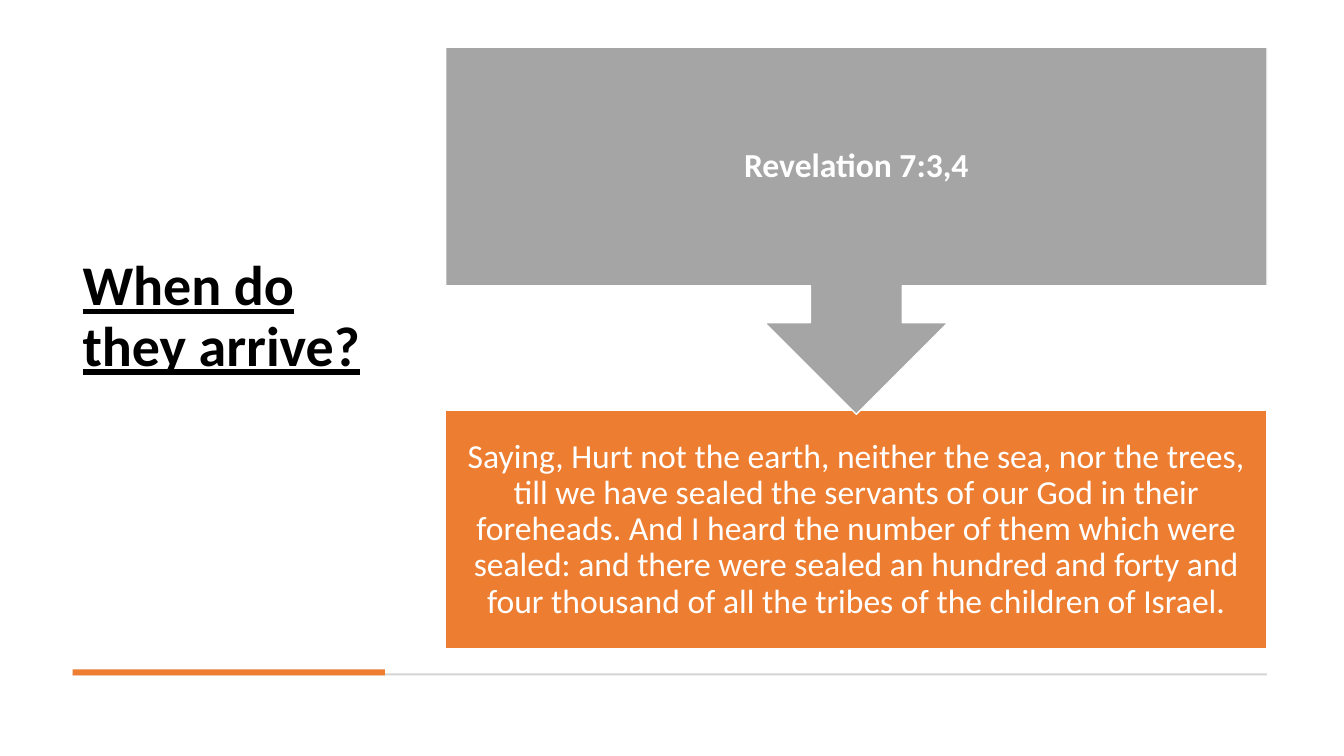
"""Build a slide pairing a title with a scripture reference and its verse."""
from dataclasses import dataclass

from pptx import Presentation
from pptx.dml.color import RGBColor
from pptx.enum.shapes import MSO_SHAPE
from pptx.enum.text import MSO_ANCHOR, MSO_AUTO_SIZE, PP_ALIGN
from pptx.util import Cm, Pt

RECTANGLE = MSO_SHAPE.RECTANGLE
ARROW_CALLOUT = MSO_SHAPE.UP_ARROW_CALLOUT
MIDDLE = MSO_ANCHOR.MIDDLE
LEFT, CENTER = PP_ALIGN.LEFT, PP_ALIGN.CENTER
FIXED_SIZE = MSO_AUTO_SIZE.NONE

TITLE = "When do they arrive?"
REFERENCE = "Revelation 7:3,4"
VERSE = (
    "Saying, Hurt not the earth, neither the sea, nor the trees, till we have "
    "sealed the servants of our God in their foreheads. And I heard the number "
    "of them which were sealed: and there were sealed an hundred and forty and "
    "four thousand of all the tribes of the children of Israel."
)


@dataclass(frozen=True)
class Theme:
    """Colours, font and type sizes of the slide."""
    font: str = "Calibri"
    ink: str = "000000"
    white: str = "FFFFFF"
    gray: str = "A5A5A5"
    orange: str = "ED7D31"
    rule: str = "D5D5D5"
    title_size: int = 40
    body_size: int = 24
    line_spacing: float = 0.9


THEME = Theme()

SLIDE_WIDTH, SLIDE_HEIGHT = Cm(33.87), Cm(19.05)
MARGIN_LEFT, MARGIN_TOP = Cm(1.83), Cm(1.19)
CONTENT_WIDTH, CONTENT_HEIGHT = Cm(30.1), Cm(15.16)
TITLE_WIDTH, PANEL_WIDTH = Cm(7.87), Cm(20.7)
PANEL_HEIGHT, CALLOUT_HEIGHT = Cm(6), Cm(9.25)
PANEL_LEFT = MARGIN_LEFT + CONTENT_WIDTH - PANEL_WIDTH
VERSE_TOP = MARGIN_TOP + CONTENT_HEIGHT - PANEL_HEIGHT
PANEL_INSET = Cm(0.48)
TITLE_INSETS = (Cm(0.25), Cm(0.13), Cm(0.25), Cm(1.65))
RULE_TOP, RULE_HEIGHT = Cm(16.97), Cm(0.05)
ACCENT_TOP, ACCENT_HEIGHT = Cm(16.87), Cm(0.15)


def add_block(slide, preset, box, fill, outlined=False):
    """Add a filled shape, with a thin white outline if asked."""
    shape = slide.shapes.add_shape(preset, *box)
    shape.shadow.inherit = False
    shape.fill.solid()
    shape.fill.fore_color.rgb = RGBColor.from_string(fill)
    if outlined:
        shape.line.color.rgb = RGBColor.from_string(THEME.white)
        shape.line.width = Pt(1)
    else:
        shape.line.fill.background()
    return shape


def write_text(shape, text, size, color, alignment, insets, bold=False, underline=False):
    """Write one vertically centred paragraph into a shape."""
    frame = shape.text_frame
    frame.word_wrap = True
    frame.auto_size = FIXED_SIZE
    frame.vertical_anchor = MIDDLE
    frame.margin_left, frame.margin_top, frame.margin_right, frame.margin_bottom = insets
    paragraph = frame.paragraphs[0]
    paragraph.alignment = alignment
    paragraph.line_spacing = THEME.line_spacing
    run = paragraph.add_run()
    run.text = text
    run.font.name = THEME.font
    run.font.size = Pt(size)
    run.font.bold = bold
    run.font.underline = underline
    run.font.color.rgb = RGBColor.from_string(color)


def write_panel(shape, text, bold=False):
    """Write white centred text into a panel."""
    write_text(shape, text, THEME.body_size, THEME.white, CENTER, (PANEL_INSET,) * 4, bold)


def main():
    """Assemble the slide and save it."""
    presentation = Presentation()
    presentation.slide_width, presentation.slide_height = SLIDE_WIDTH, SLIDE_HEIGHT
    slide = presentation.slides.add_slide(presentation.slide_layouts[5])

    title = slide.shapes.title
    title.left, title.top = MARGIN_LEFT, MARGIN_TOP
    title.width, title.height = TITLE_WIDTH, CONTENT_HEIGHT
    write_text(title, TITLE, THEME.title_size, THEME.ink, LEFT, TITLE_INSETS,
               bold=True, underline=True)

    add_block(slide, RECTANGLE, (MARGIN_LEFT, RULE_TOP, CONTENT_WIDTH, RULE_HEIGHT), THEME.rule)
    add_block(slide, RECTANGLE, (MARGIN_LEFT, ACCENT_TOP, TITLE_WIDTH, ACCENT_HEIGHT),
              THEME.orange)

    verse = add_block(slide, RECTANGLE, (PANEL_LEFT, VERSE_TOP, PANEL_WIDTH, PANEL_HEIGHT),
                      THEME.orange, outlined=True)
    write_panel(verse, VERSE)

    callout = add_block(slide, ARROW_CALLOUT,
                        (PANEL_LEFT, MARGIN_TOP, PANEL_WIDTH, CALLOUT_HEIGHT),
                        THEME.gray, outlined=True)
    callout.rotation = 180
    reference = slide.shapes.add_textbox(PANEL_LEFT, MARGIN_TOP, PANEL_WIDTH, PANEL_HEIGHT)
    write_panel(reference, REFERENCE, bold=True)

    presentation.save("out.pptx")


if __name__ == "__main__":
    main()
